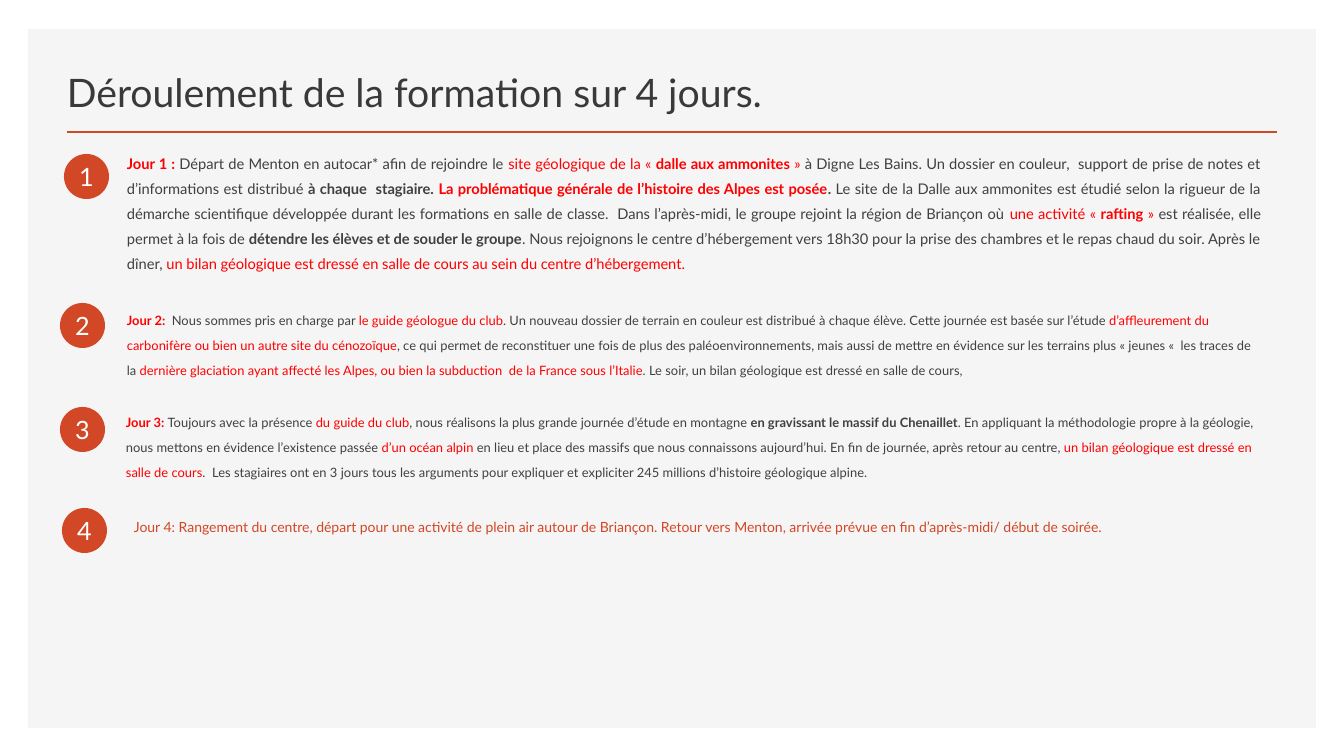
from lxml import etree
from pptx import Presentation
from pptx import util as u
from pptx.dml.color import RGBColor
from pptx.enum import shapes, text
from pptx.oxml.ns import qn

FONT = "Lato"
PANEL = RGBColor(0xF5, 0xF5, 0xF5)
ORANGE = RGBColor(0xD2, 0x47, 0x26)
TITLE = RGBColor(0x3B, 0x38, 0x38)
GREY = RGBColor(0x40, 0x40, 0x40)
RED = RGBColor(0xFF, 0x00, 0x00)
WHITE = RGBColor(0xFF, 0xFF, 0xFF)

# Run styles: colour, bold
PLAIN, STRONG = (GREY, False), (GREY, True)
KEY, KEY_STRONG = (RED, False), (RED, True)
LAST_DAY = (ORANGE, False)

PX = 914400 / 100.8


def px(*lengths):
    """Turn pixel lengths into EMU."""
    return [u.Emu(round(length * PX)) for length in lengths]


def add_run(paragraph, words, size, color, bold=False):
    run = paragraph.add_run()
    run.text = words
    run.font.color.rgb = color
    for name, value in {"name": FONT, "size": u.Pt(size), "bold": bold}.items():
        setattr(run.font, name, value)


# Each day: circle left and top, text box, text size, alignment, runs
DAYS = [
    ((64, 154), (117, 142, 1154, 175), 10.5, text.PP_ALIGN.JUSTIFY, [
        ("Jour 1 : ", KEY_STRONG),
        ("Départ de Menton en autocar* afin de rejoindre le ", PLAIN),
        ("site géologique de la « ", KEY),
        ("dalle aux ammonites ", KEY_STRONG),
        ("» ", KEY),
        ("à Digne Les Bains. Un dossier en couleur,  support de prise de notes "
         "et d’informations est distribué", PLAIN),
        (" à chaque  stagiaire. ", STRONG),
        ("La problématique générale de l’histoire des Alpes est posée", KEY_STRONG),
        (". ", STRONG),
        ("Le site de la Dalle aux ammonites est étudié selon la rigueur de la "
         "démarche scientifique développée durant les formations en salle de "
         "classe.  Dans l’après-midi, le groupe rejoint la région de Briançon où ",
         PLAIN),
        ("une activité « ", KEY),
        ("rafting", KEY_STRONG),
        (" » ", KEY),
        ("est réalisée, elle permet à la fois de ", PLAIN),
        ("détendre les élèves et de souder le groupe", STRONG),
        (". Nous rejoignons le centre d’hébergement vers 18h30 pour la prise des "
         "chambres et le repas chaud du soir. Après le dîner, ", PLAIN),
        ("un bilan géologique est dressé en salle de cours au sein du centre "
         "d’hébergement.", KEY),
    ]),
    ((60, 303), (117, 298, 1154, 101), 9.2, text.PP_ALIGN.LEFT, [
        ("Jour 2:  ", KEY_STRONG),
        ("Nous sommes pris en charge par ", PLAIN),
        ("le guide géologue du club", KEY),
        (". Un nouveau dossier de terrain en couleur est distribué à chaque élève. "
         "Cette journée est basée sur l’étude ", PLAIN),
        ("d’affleurement du carbonifère ou bien un autre site du cénozoïque", KEY),
        (", ce qui permet de reconstituer une fois de plus des paléoenvironnements, "
         "mais aussi de mettre en évidence sur les terrains plus « jeunes «  les "
         "traces de la ", PLAIN),
        ("dernière glaciation ayant affecté les Alpes, ou bien la subduction  de la "
         "France sous l’Italie", KEY),
        (". Le soir, un bilan géologique est dressé en salle de cours,", PLAIN),
    ]),
    ((60, 407), (116, 400, 1154, 101), 9.2, text.PP_ALIGN.LEFT, [
        ("Jour 3: ", KEY_STRONG),
        ("Toujours avec la présence ", PLAIN),
        ("du guide du club", KEY),
        (", nous réalisons la plus grande journée d’étude en montagne ", PLAIN),
        ("en gravissant le massif du Chenaillet", STRONG),
        (". En appliquant la méthodologie propre à la géologie, nous mettons en "
         "évidence l’existence passée ", PLAIN),
        ("d’un océan alpin ", KEY),
        ("en lieu et place des massifs que nous connaissons aujourd’hui. En fin de "
         "journée, après retour au centre, ", PLAIN),
        ("un bilan géologique est dressé en salle de cours", KEY),
        (".  Les stagiaires ont en 3 jours tous les arguments pour expliquer et "
         "expliciter 245 millions d’histoire géologique alpine.", PLAIN),
    ]),
    ((62, 508), (124, 505, 1118, 77), 10, text.PP_ALIGN.LEFT, [
        ("Jour 4: Rangement du centre, départ pour une activité de plein air autour "
         "de Briançon. Retour vers Menton, arrivée prévue en fin d’après-midi/ début "
         "de soirée.", LAST_DAY),
    ]),
]
CIRCLE = 45

presentation = Presentation()
presentation.slide_width, presentation.slide_height = px(1344, 756)
slide = presentation.slides.add_slide(presentation.slide_layouts[6])

panel = slide.shapes.add_shape(shapes.MSO_SHAPE.RECTANGLE, *px(28, 29, 1288, 699))
panel.shadow.inherit = False
panel.fill.solid()
panel.fill.fore_color.rgb = PANEL
panel.line.fill.background()

rule = slide.shapes.add_connector(
    shapes.MSO_CONNECTOR.STRAIGHT, *px(67, 132, 1277, 132))
rule.line.color.rgb = ORANGE
rule.line.width = u.Pt(2)
etree.SubElement(rule._element.spPr, qn("a:effectLst"))

title = slide.shapes.add_textbox(*px(57, 49, 758, 71)).text_frame
title.word_wrap = True
title.vertical_anchor = text.MSO_ANCHOR.BOTTOM
add_run(title.paragraphs[0], "Déroulement de la formation sur 4 jours.", 28, TITLE)

for number, (corner, box, size, alignment, runs) in enumerate(DAYS, 1):
    circle = slide.shapes.add_shape(
        shapes.MSO_SHAPE.OVAL, *px(*corner, CIRCLE, CIRCLE))
    circle.shadow.inherit = False
    circle.fill.solid()
    circle.fill.fore_color.rgb = ORANGE
    circle.line.fill.background()
    frame = circle.text_frame
    for name, value in {"margin_left": 0, "margin_right": 0, "margin_top": 0,
                        "margin_bottom": 0, "word_wrap": False,
                        "vertical_anchor": text.MSO_ANCHOR.MIDDLE}.items():
        setattr(frame, name, value)
    frame.paragraphs[0].alignment = text.PP_ALIGN.CENTER
    add_run(frame.paragraphs[0], str(number), 18, WHITE)

    description = slide.shapes.add_textbox(*px(*box)).text_frame
    description.word_wrap = True
    paragraph = description.paragraphs[0]
    paragraph.alignment = alignment
    paragraph.line_spacing = u.Pt(18)
    for words, (color, bold) in runs:
        add_run(paragraph, words, size, color, bold)

presentation.save("out.pptx")
